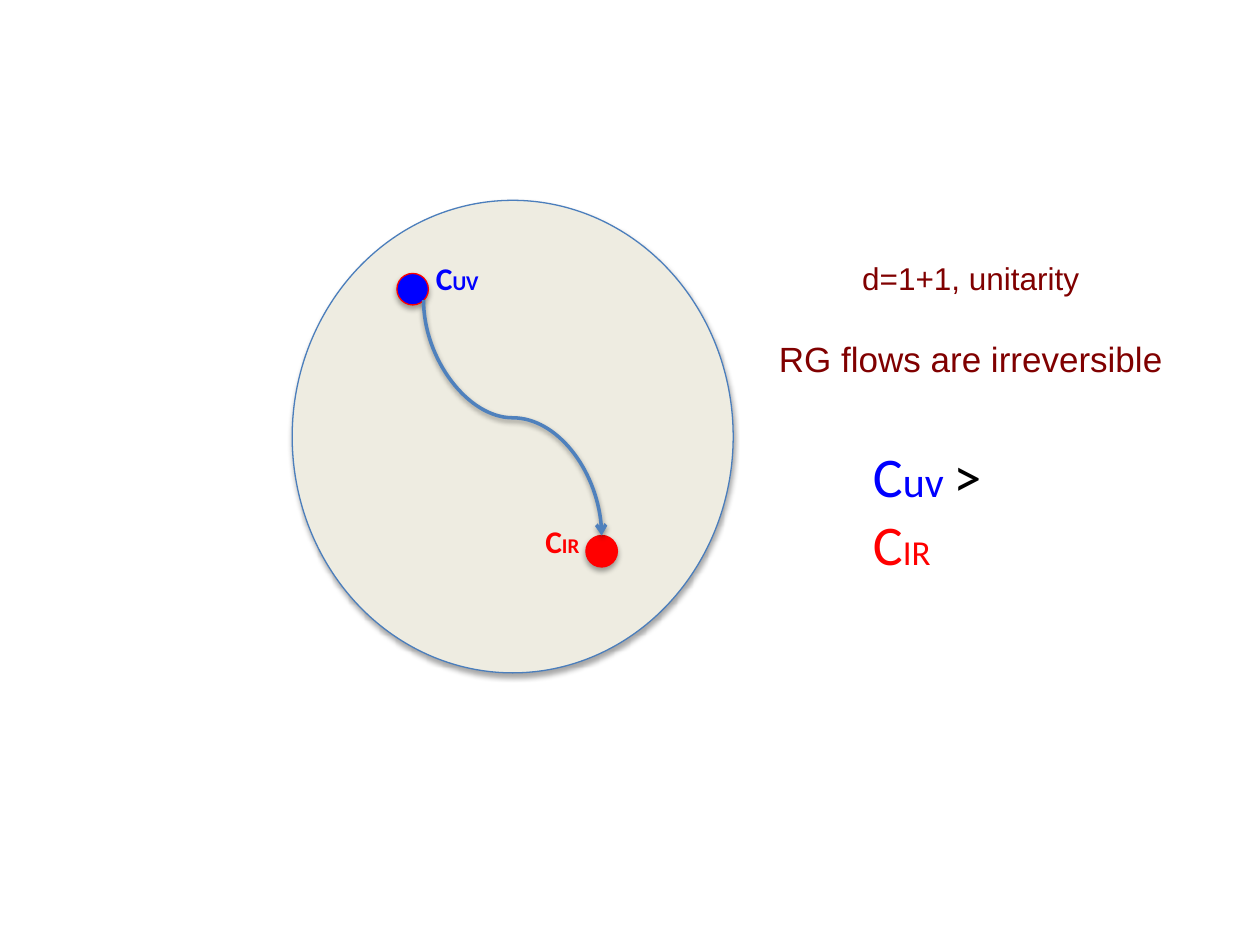
"""Build the slide on irreversible RG flows between two fixed points."""
from lxml import etree
from pptx import Presentation
from pptx.dml.color import RGBColor
from pptx.enum import shapes, text
from pptx.oxml import parse_xml
from pptx.oxml.ns import nsdecls, qn
from pptx.util import Pt

THEME = {
    "blue": "0000FF", "red": "FF0000", "maroon": "800000", "black": "000000",
    "sand": "EEECE1", "edge": "4B7EBC", "flow": "4F81BD",
    "body": "Arial", "math": "Calibri",
    "huge": 32, "big": 24, "mid": 20, "base": 18, "tiny": 12,
}
SIZE = 720, 540
DOT = 18
UV = 226.8, 156.25
IR = 334.8, 306
OVALS = [
    ((167, 114.5, 252, 270), "sand", "edge"),
    ((*UV, DOT, DOT), "blue", "red"),
    ((*IR, DOT, DOT), "red", "red"),
]
START = 242, 171.5
END = IR[0] + DOT / 2, IR[1]
NOTES = [
    {"box": (242, 144.5, 39, 29), "font": "math", "bold": True,
     "lines": [[("C", "base", "blue"), ("UV", "tiny", "blue")]]},
    {"box": (304.5, 295, 34.5, 29), "font": "math", "bold": True,
     "lines": [[("C", "base", "red"), ("IR", "tiny", "red")]]},
    {"box": (437, 144.5, 235.5, 80), "font": "body", "mid": True, "gap": 23,
     "lines": [[("d=1+1, unitarity", "base", "maroon")],
               [("RG flows are irreversible", "mid", "maroon")]]},
    {"box": (491.75, 249, 116, 46), "font": "math",
     "lines": [[("C", "huge", "blue"), ("uv ", "big", "blue"),
                ("> ", "huge", "black"),
                ("C", "huge", "red"), ("IR", "mid", "red")]]},
]


def tint(name):
    return RGBColor.from_string(THEME[name])


def shade(shape, alpha, dist):
    props = shape.element.spPr
    for old in props.findall(qn("a:effectLst")):
        props.remove(old)
    props.append(parse_xml(
        f'<a:effectLst {nsdecls("a")}><a:outerShdw blurRad="{Pt(3.1)}" '
        f'dist="{Pt(dist)}" dir="5400000" rotWithShape="0">'
        f'<a:srgbClr val="{THEME["black"]}"><a:alpha val="{alpha * 1000}"/>'
        '</a:srgbClr></a:outerShdw></a:effectLst>'))


def add_oval(slide, box, fill, edge):
    oval = slide.shapes.add_shape(shapes.MSO_SHAPE.OVAL, *map(Pt, box))
    oval.fill.solid()
    oval.fill.fore_color.rgb = tint(fill)
    oval.line.color.rgb = tint(edge)
    oval.line.width = Pt(0.75)
    shade(oval, 35, 1.8)


def add_flow(slide, start, end):
    (x1, y1), (x2, y2) = start, end
    mx, my = (x1 + x2) / 2, (y1 + y2) / 2
    dx, dy = (x2 - x1) / 2, (y2 - y1) / 2
    ends = mx + dy, my - dx, mx - dy, my + dx
    flow = slide.shapes.add_connector(shapes.MSO_CONNECTOR.CURVE, *map(Pt, ends))
    flow.element.spPr.find(qn("a:xfrm")).set("rot", "16200000")
    flow.line.color.rgb = tint("flow")
    flow.line.width = Pt(2)
    line = flow.element.spPr.find(qn("a:ln"))
    etree.SubElement(line, qn("a:tailEnd")).set("type", "arrow")
    shade(flow, 38, 1.6)


def add_note(slide, note):
    frame = slide.shapes.add_textbox(*map(Pt, note["box"])).text_frame
    frame.word_wrap = False
    frame.auto_size = text.MSO_AUTO_SIZE.SHAPE_TO_FIT_TEXT
    for i, line in enumerate(note["lines"]):
        para = frame.add_paragraph() if i else frame.paragraphs[0]
        if note.get("mid"):
            para.alignment = text.PP_ALIGN.CENTER
        if i:
            para.space_before = Pt(note["gap"])
        for words, size, color in line:
            run = para.add_run()
            run.text = words
            run.font.name = THEME[note["font"]]
            run.font.size = Pt(THEME[size])
            run.font.bold = note.get("bold", False)
            run.font.color.rgb = tint(color)


def main():
    deck = Presentation()
    deck.slide_width, deck.slide_height = map(Pt, SIZE)
    slide = deck.slides.add_slide(deck.slide_layouts[6])
    for oval in OVALS:
        add_oval(slide, *oval)
    add_flow(slide, START, END)
    for note in NOTES:
        add_note(slide, note)
    deck.save("out.pptx")


if __name__ == "__main__":
    main()
